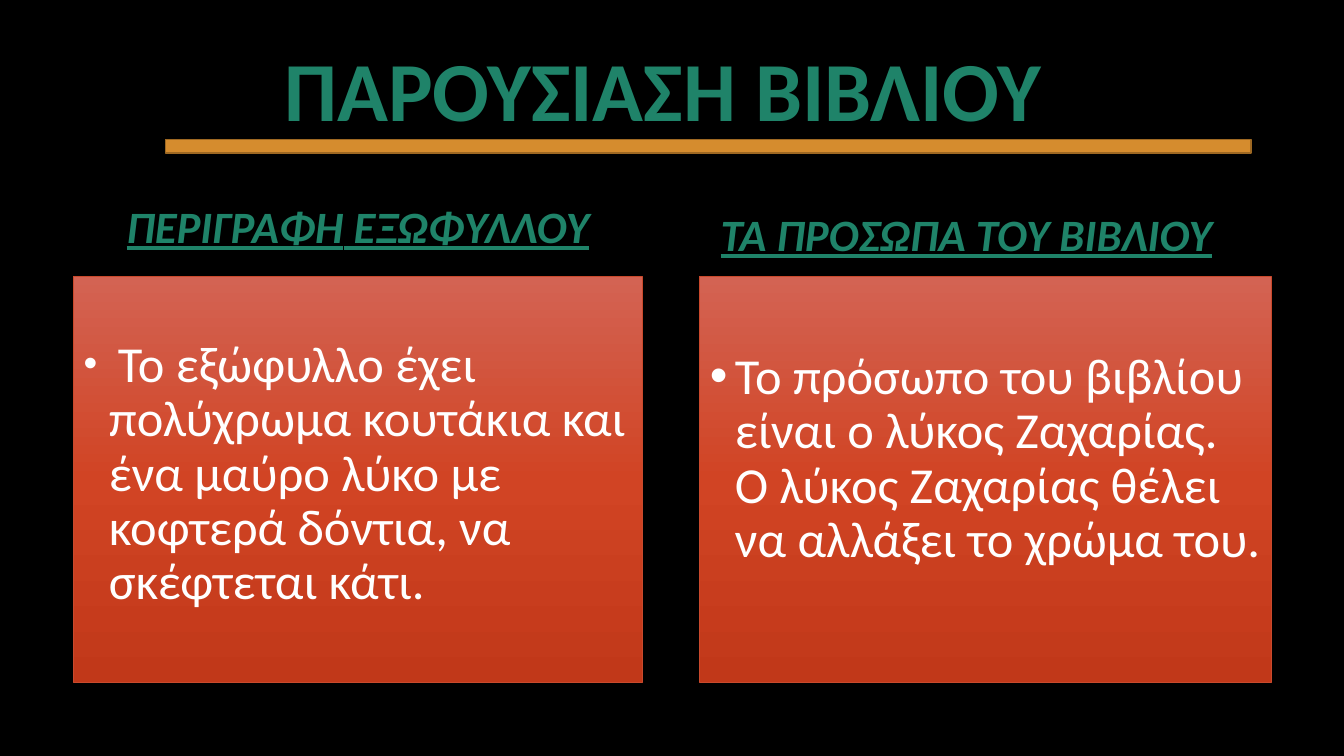
"""Build the book presentation slide with two captioned text panels."""
from dataclasses import dataclass

from lxml import etree
from pptx import Presentation, util as u
from pptx.dml.color import RGBColor
from pptx.enum import shapes, text
from pptx.oxml import ns

WIDTH, HEIGHT = u.Inches(13.33), u.Inches(7.5)
FONT = "Calibri"
COLOURS = {
    "background": "000000",
    "heading": "1F8369",
    "body": "FFFFFF",
    "panel_top": "D36353",
    "panel_middle": "D14424",
    "panel_bottom": "C13819",
    "panel_edge": "C9492C",
    "rule": "D58C2E",
    "rule_edge": "9E6822",
}
PANEL_STOPS = {0: "panel_top", 50: "panel_middle", 100: "panel_bottom"}


@dataclass(frozen=True)
class Area:
    """A rectangle in percent of the slide's width and height."""

    left: float
    top: float
    width: float
    height: float

    def lengths(self) -> tuple[int, int, int, int]:
        return (
            int(WIDTH * self.left / 100),
            int(HEIGHT * self.top / 100),
            int(WIDTH * self.width / 100),
            int(HEIGHT * self.height / 100),
        )


@dataclass(frozen=True)
class Span:
    """A run of text with its size and style."""

    words: str
    size: float
    bold: bool = False
    slanted: bool = False


@dataclass(frozen=True)
class Column:
    """A caption above a panel, with their placeholder numbers."""

    caption_id: int
    caption_area: Area
    caption: list[Span]
    panel_id: int
    panel_area: Area
    panel_inset: float
    body: list[Span]


TITLE_AREA = Area(6.9, 2.8, 86.27, 19.33)
TITLE = [Span("ΠΑΡΟΥΣΙΑΣΗ ΒΙΒΛΙΟΥ ", 60, bold=True)]
RULE_AREA = Area(-2.25, 15.47, 109.9, 7.73)
COLUMNS = [
    Column(
        1, Area(5.48, 22.13, 42.31, 12),
        [
            Span("ΠΕΡΙΓΡΑΦΗ", 32, True, True),
            Span(" ", 32, False, True),
            Span("ΕΞΩΦΥΛΛΟΥ", 32, True, True),
        ],
        2, Area(5.48, 36.53, 42.31, 53.73), 0.62,
        [
            Span(" ", 28),
            Span("Το εξώφυλλο έχει πολύχρωμα κουτάκια και ένα μαύρο λύκο "
                 "με κοφτερά δόντια, να σκέφτεται κάτι.", 36),
        ],
    ),
    Column(
        3, Area(50.64, 23.2, 42.54, 12),
        [Span("ΤΑ ΠΡΟΣΩΠΑ ΤΟΥ ΒΙΒΛΙΟΥ", 32, True, True)],
        4, Area(52.06, 36.53, 42.54, 53.73), 0.74,
        [
            Span("Το πρόσωπο του βιβλίου είναι ο λύκος Ζαχαρίας. "
                 "Ο λύκος Ζαχαρίας θέλει να αλλάξει το χρώμα του.", 36),
        ],
    ),
]


def colour(name: str) -> RGBColor:
    return RGBColor.from_string(COLOURS[name])


def place(box, area: Area) -> None:
    box.left, box.top, box.width, box.height = area.lengths()


def write(box, spans: list[Span], tint: str, anchor, align):
    frame = box.text_frame
    frame.word_wrap = True
    frame.auto_size = text.MSO_AUTO_SIZE.NONE
    frame.vertical_anchor = anchor
    para = frame.paragraphs[0]
    para.alignment = align
    para.line_spacing = 0.9
    para.space_before = u.Pt(0)
    for span in spans:
        run = para.add_run()
        run.text = span.words
        run.font.name = FONT
        run.font.size = u.Pt(span.size)
        run.font.bold = span.bold
        run.font.italic = span.slanted
        run.font.underline = span.slanted
        run.font.color.rgb = colour(tint)
    return para


def add_bullet(para) -> None:
    properties = para._p.get_or_add_pPr()
    properties.set("marL", str(u.Inches(0.25)))
    properties.set("indent", str(u.Inches(-0.25)))
    font = etree.SubElement(properties, ns.qn("a:buFont"))
    font.set("typeface", "Arial")
    etree.SubElement(properties, ns.qn("a:buChar")).set("char", "•")


def shade_panel(box) -> None:
    box.fill.gradient()
    gradient = box._element.spPr.find(ns.qn("a:gradFill"))
    for child in list(gradient):
        gradient.remove(child)
    stops = etree.SubElement(gradient, ns.qn("a:gsLst"))
    for share, name in PANEL_STOPS.items():
        stop = etree.SubElement(stops, ns.qn("a:gs"), pos=str(share * 1000))
        etree.SubElement(stop, ns.qn("a:srgbClr"), val=COLOURS[name])
    etree.SubElement(gradient, ns.qn("a:lin"), ang="5400000", scaled="0")
    box.line.color.rgb = colour("panel_edge")
    box.line.width = u.Pt(0.5)


def draw_column(page, column: Column) -> None:
    boxes = {box.placeholder_format.idx: box for box in page.placeholders}
    caption, panel = boxes[column.caption_id], boxes[column.panel_id]
    place(caption, column.caption_area)
    write(caption, column.caption, "heading",
          text.MSO_ANCHOR.BOTTOM, text.PP_ALIGN.CENTER)
    place(panel, column.panel_area)
    shade_panel(panel)
    para = write(panel, column.body, "body",
                 text.MSO_ANCHOR.TOP, text.PP_ALIGN.LEFT)
    panel.text_frame.margin_top = u.Inches(column.panel_inset)
    add_bullet(para)


def draw_rule(page) -> None:
    rule = page.shapes.add_shape(
        shapes.MSO_SHAPE.MATH_MINUS, *RULE_AREA.lengths())
    rule.shadow.inherit = False
    rule.fill.solid()
    rule.fill.fore_color.rgb = colour("rule")
    rule.line.color.rgb = colour("rule_edge")
    rule.line.width = u.Pt(1)


def main() -> None:
    deck = Presentation()
    deck.slide_width, deck.slide_height = WIDTH, HEIGHT
    page = deck.slides.add_slide(deck.slide_layouts.get_by_name("Comparison"))
    page.background.fill.solid()
    page.background.fill.fore_color.rgb = colour("background")
    place(page.shapes.title, TITLE_AREA)
    write(page.shapes.title, TITLE, "heading",
          text.MSO_ANCHOR.MIDDLE, text.PP_ALIGN.CENTER)
    for column in COLUMNS:
        draw_column(page, column)
    draw_rule(page)
    deck.save("out.pptx")


if __name__ == "__main__":
    main()
